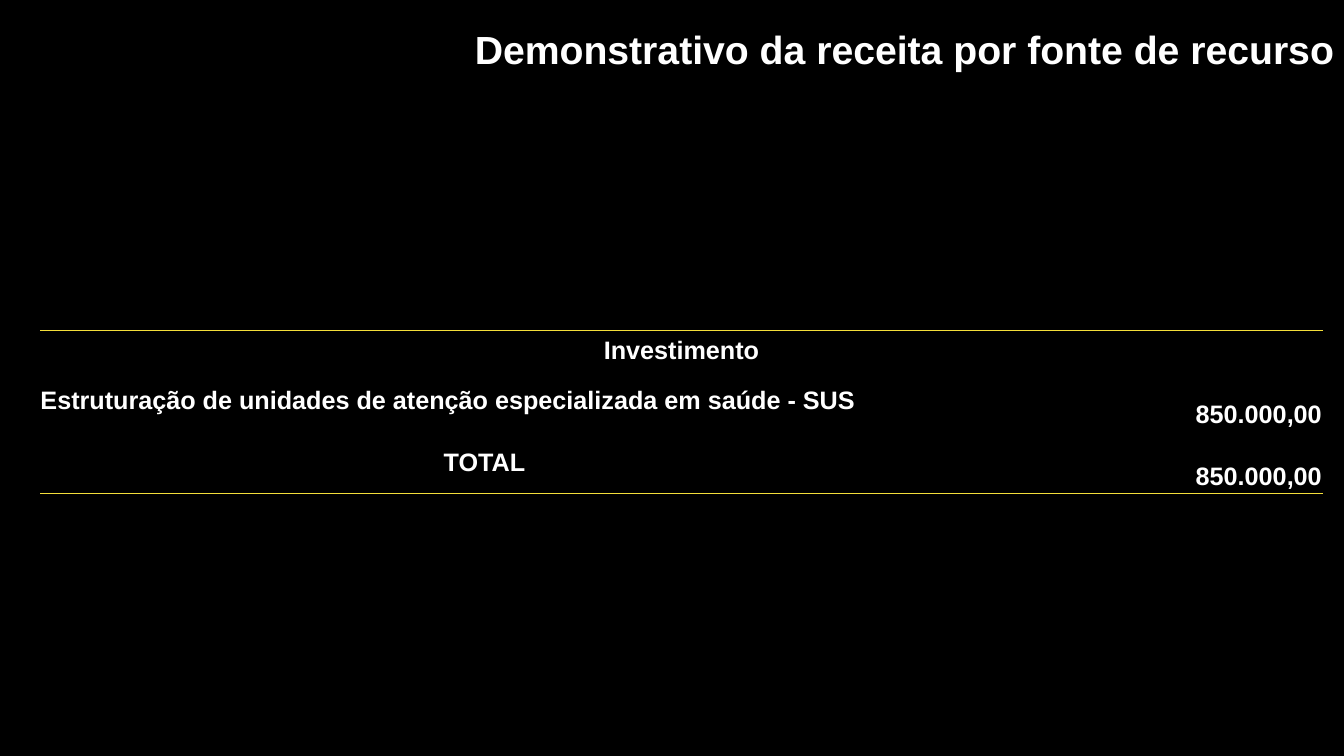
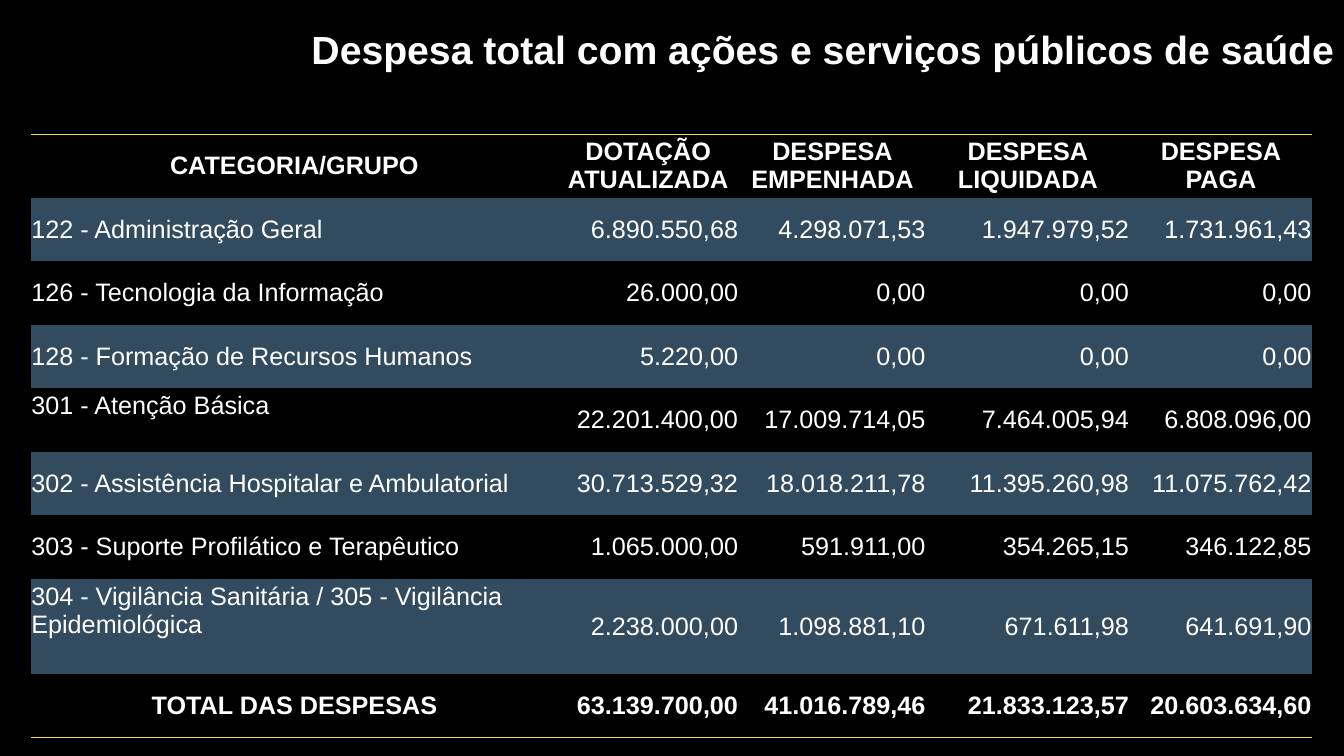
from dataclasses import dataclass

from lxml import etree
from pptx import Presentation
from pptx.dml.color import RGBColor
from pptx.enum import text
from pptx.oxml import ns
from pptx.util import Cm, Pt

LEFT, CENTER, RIGHT = text.PP_ALIGN.LEFT, text.PP_ALIGN.CENTER, text.PP_ALIGN.RIGHT
TOP, MIDDLE, BOTTOM = (
    text.MSO_ANCHOR.TOP, text.MSO_ANCHOR.MIDDLE, text.MSO_ANCHOR.BOTTOM)
NO_STYLE = "{2D5ABB26-0587-4C30-8999-92F81FD0307C}"


@dataclass(frozen=True)
class Theme:
    background: RGBColor = RGBColor(0x00, 0x00, 0x00)
    ink: RGBColor = RGBColor(0xFF, 0xFF, 0xFF)
    band: RGBColor = RGBColor(0x32, 0x4B, 0x5F)
    rule: str = "F4DE3A"
    font: str = "Arial"
    title_size: int = 28
    body_size: int = 18


@dataclass(frozen=True)
class Entry:
    """One table cell; padding is its top and bottom inset in cm."""
    content: str
    align: text.PP_ALIGN = LEFT
    bold: bool = False
    anchor: text.MSO_ANCHOR = MIDDLE
    padding: float = 0


@dataclass(frozen=True)
class Grid:
    """Table position and sizes, in cm."""
    left: float
    top: float
    widths: tuple[float, ...]
    heights: tuple[float, ...]
    rows: list[list[Entry]]
    banded: bool = False


THEME = Theme()


# Text
def write(frame, content: str, align, size: int, bold: bool) -> None:
    for index, line in enumerate(content.split("\n")):
        para = frame.paragraphs[0] if index == 0 else frame.add_paragraph()
        para.alignment = align
        span = para.add_run()
        span.text = line
        span.font.name = THEME.font
        span.font.size = Pt(size)
        span.font.bold = bold
        span.font.color.rgb = THEME.ink


def add_page(deck, title: str):
    page = deck.slides.add_slide(deck.slide_layouts.get_by_name("Title Only"))
    box = page.shapes.title
    box.left, box.top, box.width, box.height = Cm(7.1), Cm(0.5), Cm(26.77), Cm(1.45)
    box.text_frame.vertical_anchor = MIDDLE
    write(box.text_frame, title, RIGHT, THEME.title_size, True)
    return page


# Tables
def add_rule(cell, side: str) -> None:
    line = etree.Element(ns.qn(f"a:ln{side}"), w=str(Pt(1)))
    fill = etree.SubElement(line, ns.qn("a:solidFill"))
    etree.SubElement(fill, ns.qn("a:srgbClr"), val=THEME.rule)
    cell._tc.get_or_add_tcPr().insert(0, line)


def fill_cell(cell, entry: Entry, shaded: bool) -> None:
    cell.margin_left = cell.margin_right = Cm(0.02 if entry.align == RIGHT else 0)
    cell.margin_top = cell.margin_bottom = Cm(entry.padding)
    cell.vertical_anchor = entry.anchor
    if shaded:
        cell.fill.solid()
        cell.fill.fore_color.rgb = THEME.band
    else:
        cell.fill.background()
    write(cell.text_frame, entry.content, entry.align, THEME.body_size, entry.bold)


def add_grid(page, grid: Grid) -> None:
    table = page.shapes.add_table(
        len(grid.heights), len(grid.widths), Cm(grid.left), Cm(grid.top),
        Cm(sum(grid.widths)), Cm(sum(grid.heights))).table
    table.first_row = table.horz_banding = False
    table._tbl.tblPr.find(ns.qn("a:tableStyleId")).text = NO_STYLE
    for column, width in zip(table.columns, grid.widths):
        column.width = Cm(width)
    for row, height in zip(table.rows, grid.heights):
        row.height = Cm(height)

    last = len(grid.rows) - 1
    for number, entries in enumerate(grid.rows):
        if len(entries) == 1:
            table.cell(number, 0).merge(table.cell(number, len(grid.widths) - 1))
        shaded = grid.banded and number % 2 == 1
        for column, entry in enumerate(entries):
            fill_cell(table.cell(number, column), entry, shaded)
    for column in range(len(grid.widths)):
        add_rule(table.cell(0, column), "T")
        add_rule(table.cell(last, column), "B")


# Slide content
def revenue_grid() -> Grid:
    amount = Entry("850.000,00", RIGHT, True, BOTTOM, 0.07)
    purpose = "Estruturação de unidades de atenção especializada em saúde - SUS"
    return Grid(1.02, 8.33, (22.38, 9.93), (1, 1.55, 1.55), [
        [Entry("Investimento", CENTER, True)],
        [Entry(purpose, bold=True), amount],
        [Entry("TOTAL", CENTER, True), amount],
    ])


HEADINGS = ("CATEGORIA/GRUPO", "DOTAÇÃO\nATUALIZADA", "DESPESA\nEMPENHADA",
            "DESPESA\nLIQUIDADA", "DESPESA\nPAGA")
EXPENSES = (
    ("122 - Administração Geral",
     "6.890.550,68", "4.298.071,53", "1.947.979,52", "1.731.961,43"),
    ("126 - Tecnologia da Informação", "26.000,00", "0,00", "0,00", "0,00"),
    ("128 - Formação de Recursos Humanos", "5.220,00", "0,00", "0,00", "0,00"),
    ("301 - Atenção Básica",
     "22.201.400,00", "17.009.714,05", "7.464.005,94", "6.808.096,00"),
    ("302 - Assistência Hospitalar e Ambulatorial",
     "30.713.529,32", "18.018.211,78", "11.395.260,98", "11.075.762,42"),
    ("303 - Suporte Profilático e Terapêutico",
     "1.065.000,00", "591.911,00", "354.265,15", "346.122,85"),
    ("304 - Vigilância Sanitária / 305 - Vigilância Epidemiológica",
     "2.238.000,00", "1.098.881,10", "671.611,98", "641.691,90"),
)
TOTALS = ("TOTAL DAS DESPESAS",
          "63.139.700,00", "41.016.789,46", "21.833.123,57", "20.603.634,60")
TOP_ALIGNED = ("301", "304")


def expense_grid() -> Grid:
    rows = [[Entry(heading, CENTER, True) for heading in HEADINGS]]
    for label, *amounts in EXPENSES:
        if label.startswith(TOP_ALIGNED):
            category = Entry(label, anchor=TOP, padding=0.1)
        else:
            category = Entry(label)
        rows.append([category, *(Entry(amount, RIGHT) for amount in amounts)])
    label, *amounts = TOTALS
    rows.append([Entry(label, CENTER, True),
                 *(Entry(amount, RIGHT, True) for amount in amounts)])
    return Grid(0.79, 3.38, (13.26, 4.57, 4.72, 5.13, 4.6),
                (1.6,) * 7 + (2.4, 1.6), rows, banded=True)


def main() -> None:
    deck = Presentation()
    deck.slide_width, deck.slide_height = Cm(33.87), Cm(19.05)
    backdrop = deck.slide_master.background.fill
    backdrop.solid()
    backdrop.fore_color.rgb = THEME.background

    for title, grid in (
        ("Demonstrativo da receita por fonte de recurso", revenue_grid()),
        ("Despesa total com ações e serviços públicos de saúde", expense_grid()),
    ):
        add_grid(add_page(deck, title), grid)
    deck.save("out.pptx")


if __name__ == "__main__":
    main()
